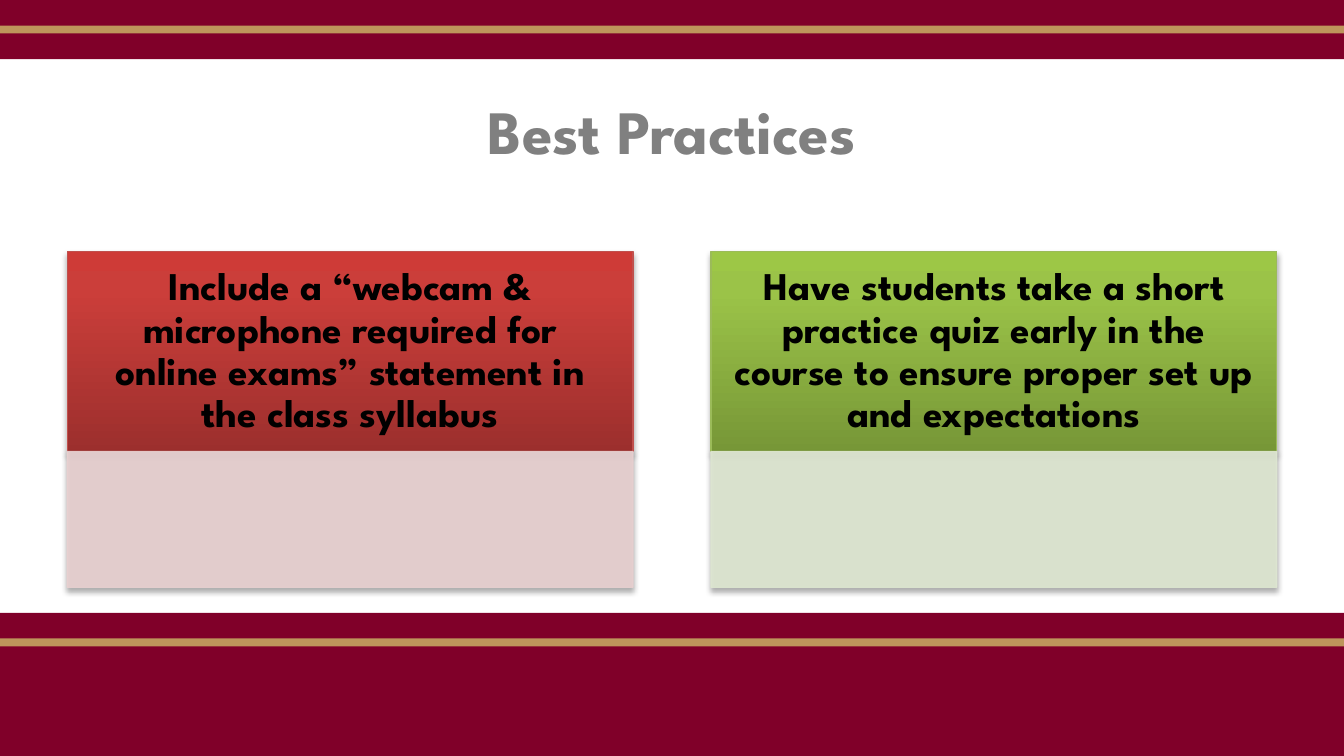
"""Build the "Best Practices" slide with two recommendation cards."""
from copy import deepcopy

from lxml import etree
from pptx import Presentation
from pptx.dml.color import RGBColor
from pptx.enum.shapes import MSO_SHAPE
from pptx.enum.text import MSO_ANCHOR, PP_ALIGN
from pptx.oxml import parse_xml
from pptx.oxml.ns import nsdecls, qn
from pptx.util import Inches, Pt

RECTANGLE = MSO_SHAPE.RECTANGLE
MIDDLE = MSO_ANCHOR.MIDDLE
CENTER = PP_ALIGN.CENTER

MAROON = RGBColor(0x80, 0x00, 0x29)
GOLD = RGBColor(0xBE, 0x95, 0x5B)
GRAY = RGBColor(0x80, 0x80, 0x80)
BLACK = RGBColor(0x00, 0x00, 0x00)
RED_LINE = RGBColor(0xC0, 0x50, 0x4D)
RED_STOPS = [RGBColor(0x9C, 0x2F, 0x2D), RGBColor(0xCB, 0x3E, 0x3A), RGBColor(0xCE, 0x3B, 0x37)]
PALE_RED = RGBColor(0xE8, 0xD0, 0xD0)
GREEN_LINE = RGBColor(0x9B, 0xBB, 0x59)
GREEN_STOPS = [RGBColor(0x77, 0x97, 0x37), RGBColor(0x9B, 0xC3, 0x48), RGBColor(0x9D, 0xC7, 0x46)]
PALE_GREEN = RGBColor(0xDE, 0xE7, 0xD1)

FONT = "League Spartan"
SLIDE_WIDTH = 10
SLIDE_HEIGHT = SLIDE_WIDTH * 9 / 16
STOP_POSITIONS = [0, 0.8, 1]
SHADOW = (
    f'<a:effectLst {nsdecls("a")}><a:outerShdw blurRad="39370" dist="22860" dir="5400000" '
    'rotWithShape="0"><a:srgbClr val="000000"><a:alpha val="35000"/></a:srgbClr>'
    '</a:outerShdw></a:effectLst>'
)


def write_text(shape, text, *, size, color, margins=(0.1, 0.05), line_spacing=None):
    frame = shape.text_frame
    frame.word_wrap = True
    frame.vertical_anchor = MIDDLE
    frame.margin_left = frame.margin_right = Inches(margins[0])
    frame.margin_top = frame.margin_bottom = Inches(margins[1])
    paragraph = frame.paragraphs[0]
    paragraph.alignment = CENTER
    paragraph.line_spacing = line_spacing
    run = paragraph.add_run()
    run.text = text
    run.font.name = FONT
    run.font.size = Pt(size)
    run.font.bold = True
    run.font.color.rgb = color


def add_panel(left, top, width, height, fill, line=None):
    panel = slide.shapes.add_shape(RECTANGLE, Inches(left), Inches(top), Inches(width), Inches(height))
    panel.shadow.inherit = False
    panel.fill.solid()
    panel.fill.fore_color.rgb = fill
    if line is None:
        panel.line.fill.background()
    else:
        panel.line.color.rgb = line
        panel.line.width = Pt(0.75)
        properties = panel.element.spPr
        properties.replace(properties.find(qn("a:effectLst")), parse_xml(SHADOW))
    return panel


presentation = Presentation()
presentation.slide_width = Inches(SLIDE_WIDTH)
presentation.slide_height = Inches(SLIDE_HEIGHT)
slide = presentation.slides.add_slide(presentation.slide_layouts[5])

for band_top, band_bottom in [(0, 0.44), (4.56, SLIDE_HEIGHT)]:
    add_panel(0, band_top, SLIDE_WIDTH, band_bottom - band_top, MAROON)
    add_panel(0, band_top + 0.19, SLIDE_WIDTH, 0.06, GOLD)

title = slide.shapes.title
title.left, title.top = Inches(0.5), Inches(0.5)
title.width, title.height = Inches(9), Inches(0.94)
write_text(title, "Best Practices", size=33, color=GRAY)

practices = [
    ("Include a “webcam & microphone required for online exams” statement in the class syllabus",
     RED_STOPS, RED_LINE, PALE_RED),
    ("Have students take a short practice quiz early in the course to ensure proper set up and expectations",
     GREEN_STOPS, GREEN_LINE, PALE_GREEN),
]
card_width, card_pitch = 4.21, 4.79
header_top, header_height, body_height = 1.87, 1.49, 1.01

for index, (practice, stop_colors, header_line, body_color) in enumerate(practices):
    left = 0.5 + index * card_pitch

    header = add_panel(left, header_top, card_width, header_height, stop_colors[0], header_line)
    header.fill.gradient()
    header.fill.gradient_angle = 90
    stop_list = header.element.spPr.find(qn("a:gradFill")).find(qn("a:gsLst"))
    stop_list.append(deepcopy(stop_list[-1]))
    for stop, position, color in zip(header.fill.gradient_stops, STOP_POSITIONS, stop_colors):
        stop.position = position
        stop.color.rgb = color
    write_text(header, practice, size=21, color=BLACK, margins=(0.16, 0.09), line_spacing=0.9)

    body = add_panel(left, header_top + header_height, card_width, body_height, body_color, body_color)
    for color_element in body.element.spPr.findall(".//" + qn("a:solidFill") + "/" + qn("a:srgbClr")):
        etree.SubElement(color_element, qn("a:alpha"), val="90000")

presentation.save("out.pptx")
